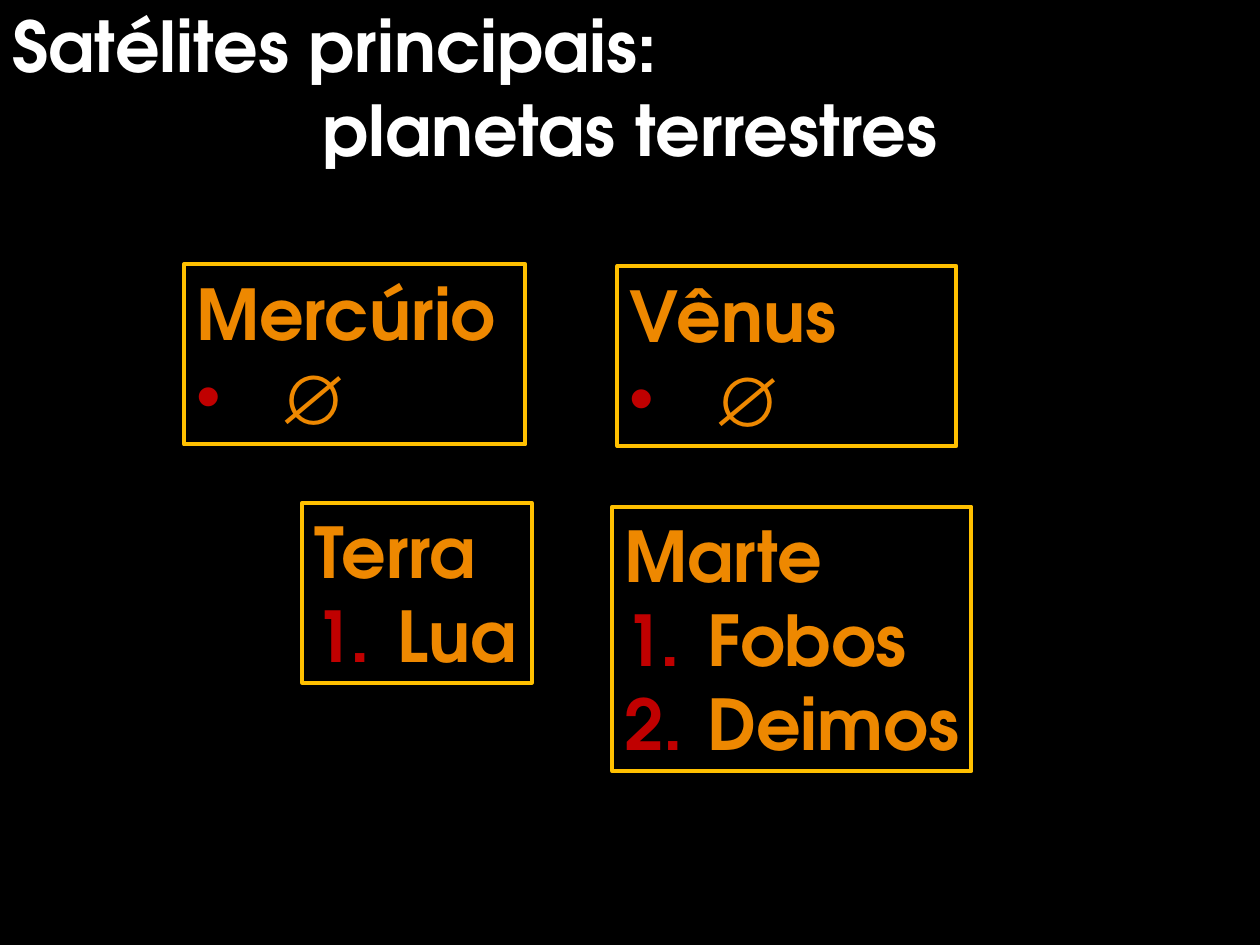
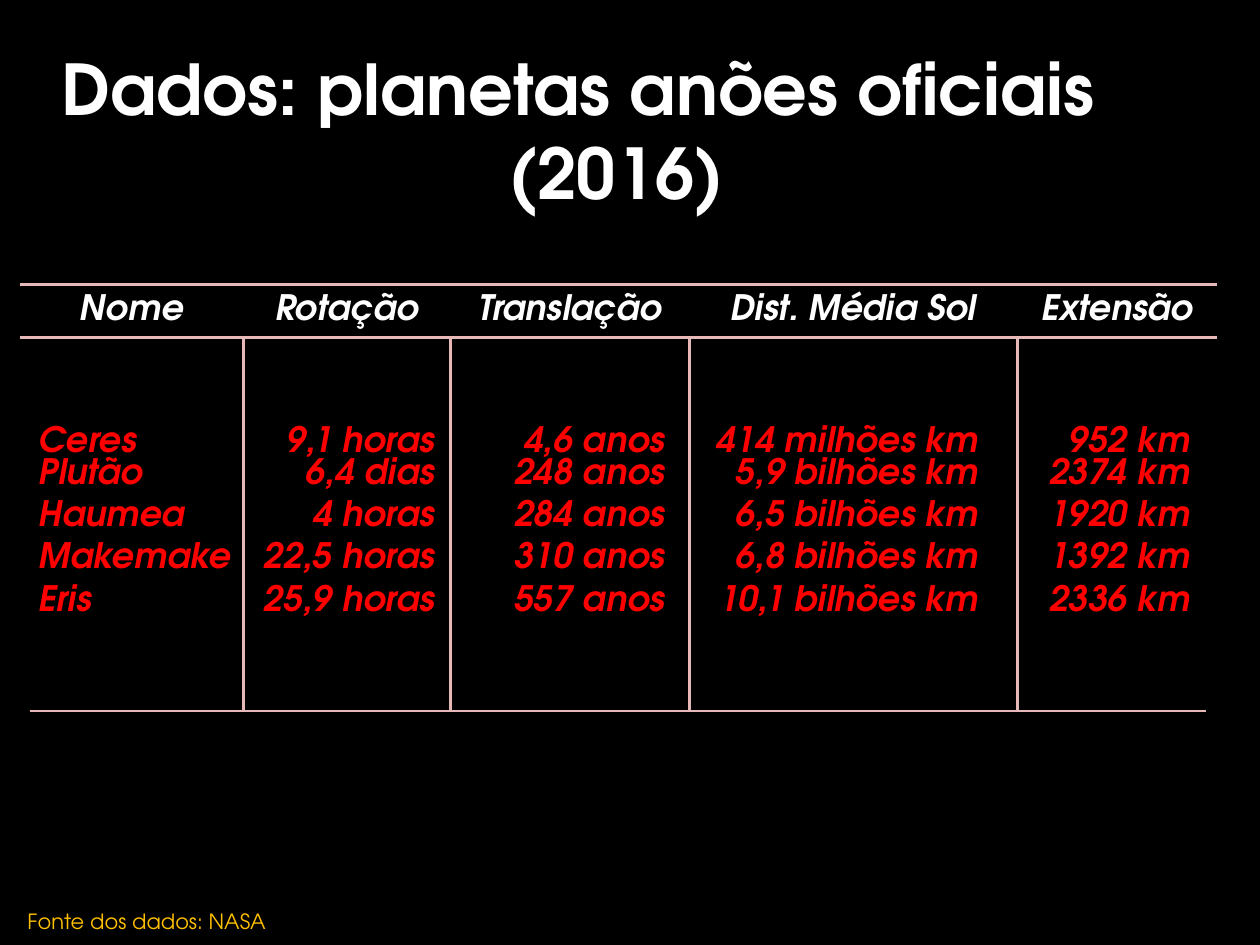
from itertools import accumulate

from lxml import etree
from pptx import Presentation
from pptx.dml.color import RGBColor
from pptx.enum.shapes import MSO_CONNECTOR, MSO_SHAPE
from pptx.enum.text import MSO_ANCHOR, PP_ALIGN
from pptx.oxml.ns import qn
from pptx.util import Pt

LEFT, CENTER, RIGHT = PP_ALIGN.LEFT, PP_ALIGN.CENTER, PP_ALIGN.RIGHT
TOP, MIDDLE, BOTTOM = MSO_ANCHOR.TOP, MSO_ANCHOR.MIDDLE, MSO_ANCHOR.BOTTOM
STRAIGHT = MSO_CONNECTOR.STRAIGHT
RECTANGLE = MSO_SHAPE.RECTANGLE

FONT, SYMBOL_FONT = "TeX Gyre Adventor", "Arial"
BLACK, WHITE, RED = "000000", "FFFFFF", "FF0000"
GOLD, ORANGE, MARKER_RED, PINK = "FFC000", "EE8800", "C00000", "E6B9B8"
INSETS = (7.2, 3.6, 7.2, 3.6)
HANGING = 36

# name, satellites, box (left, top, width, height)
PLANETS = [
    ("Mercúrio", [], (105.1, 151, 195.1, 103)),
    ("Vênus", [], (352.8, 152, 193.7, 103)),
    ("Terra", ["Lua"], (172.8, 287.3, 131, 103)),
    ("Marte", ["Fobos", "Deimos"], (349.9, 289.5, 205.2, 151.2)),
]

# heading, column width, alignment of the values, left margin, right margin
COLUMNS = [
    ("Nome", 127.5, LEFT, 10.5, 0),
    ("Rotação", 118.5, RIGHT, 0, 9),
    ("Translação", 136.5, RIGHT, 0, 14),
    ("Dist. Média Sol", 187.5, RIGHT, 0, 22),
    ("Extensão", 114, RIGHT, 0, 15),
]
DWARF_PLANETS = [
    ("Ceres", "9,1 horas", "4,6 anos", "414 milhões km", "952 km"),
    ("Plutão", "6,4 dias", "248 anos", "5,9 bilhões km", "2374 km"),
    ("Haumea", "4 horas", "284 anos", "6,5 bilhões km", "1920 km"),
    ("Makemake", "22,5 horas", "310 anos", "6,8 bilhões km", "1392 km"),
    ("Eris", "25,9 horas", "557 anos", "10,1 bilhões km", "2336 km"),
]
ROW_HEIGHTS = [30.3, 69.3, 24, 24, 24, 72]


def rgb(hex_color):
    return RGBColor.from_string(hex_color)


def points(*lengths):
    return [Pt(length) for length in lengths]


def write(paragraph, text, size=40, color=WHITE, font=FONT, bold=True,
          italic=False, align=LEFT):
    paragraph.alignment = align
    run = paragraph.add_run()
    run.text = text
    run.font.size = Pt(size)
    run.font.name = font
    run.font.bold = bold
    run.font.italic = italic
    run.font.color.rgb = rgb(color)


def set_insets(frame, left, top, right, bottom):
    frame.margin_left, frame.margin_top = Pt(left), Pt(top)
    frame.margin_right, frame.margin_bottom = Pt(right), Pt(bottom)


def add_paragraph(frame, index):
    return frame.paragraphs[0] if index == 0 else frame.add_paragraph()


def add_text_box(slide, box, lines, anchor=TOP, **style):
    """Each line is a pair of text and alignment."""
    frame = slide.shapes.add_textbox(*points(*box)).text_frame
    frame.word_wrap = True
    frame.vertical_anchor = anchor
    set_insets(frame, *INSETS)
    for index, (text, align) in enumerate(lines):
        write(add_paragraph(frame, index), text, align=align, **style)


def add_title(slide, box, first_line, second_line):
    lines = [(first_line, LEFT), (second_line, CENTER)]
    add_text_box(slide, box, lines, anchor=MIDDLE)


def add_slide(deck):
    slide = deck.slides.add_slide(deck.slide_layouts[6])
    slide.background.fill.solid()
    slide.background.fill.fore_color.rgb = rgb(BLACK)
    return slide


def set_marker(paragraph, numbered=None):
    """Hang the paragraph; numbered is True, False (bullet) or None (no marker)."""
    properties = paragraph._p.get_or_add_pPr()
    properties.set("marL", str(Pt(HANGING)))
    properties.set("indent", str(-Pt(HANGING)))
    if numbered is None:
        etree.SubElement(properties, qn("a:buNone"))
        return
    color = etree.SubElement(properties, qn("a:buClr"))
    etree.SubElement(color, qn("a:srgbClr"), val=MARKER_RED)
    if numbered:
        etree.SubElement(properties, qn("a:buFont"), typeface="+mj-lt")
        etree.SubElement(properties, qn("a:buAutoNum"), type="arabicPeriod")
    else:
        etree.SubElement(properties, qn("a:buFont"), typeface=SYMBOL_FONT)
        etree.SubElement(properties, qn("a:buChar"), char="•")


def add_planet(slide, box, name, satellites):
    card = slide.shapes.add_shape(RECTANGLE, *points(*box))
    card.shadow.inherit = False
    card.fill.background()
    card.line.color.rgb = rgb(GOLD)
    card.line.width = Pt(2.25)
    frame = card.text_frame
    frame.word_wrap = True
    frame.vertical_anchor = TOP
    set_insets(frame, 7.2, 3.6, 0, 3.6)

    heading = frame.paragraphs[0]
    write(heading, name, color=ORANGE)
    set_marker(heading)
    for satellite in satellites:
        entry = frame.add_paragraph()
        write(entry, " " + satellite, color=ORANGE)
        set_marker(entry, numbered=True)
    if not satellites:
        entry = frame.add_paragraph()
        write(entry, " ", color=ORANGE)
        write(entry, "∅", color=ORANGE, font=SYMBOL_FONT)
        set_marker(entry, numbered=False)


def add_rule(slide, x1, y1, x2, y2):
    rule = slide.shapes.add_connector(STRAIGHT, *points(x1, y1, x2, y2))
    rule.line.color.rgb = rgb(PINK)
    rule.line.width = Pt(1.5)
    etree.SubElement(rule._element.spPr, qn("a:effectLst"))


def clear_cell(cell):
    """Take away the borders and fill that the table style gives."""
    properties = cell._tc.get_or_add_tcPr()
    for side in ("lnL", "lnR", "lnT", "lnB"):
        border = etree.SubElement(properties, qn("a:" + side))
        etree.SubElement(border, qn("a:noFill"))
    cell.fill.background()


def add_data_table(slide, left, top):
    widths = [column[1] for column in COLUMNS]
    width, height = sum(widths), sum(ROW_HEIGHTS)
    table = slide.shapes.add_table(
        len(ROW_HEIGHTS), len(COLUMNS), *points(left, top, width, height)).table
    table.first_row = table.horz_banding = False
    for row, row_height in zip(table.rows, ROW_HEIGHTS):
        row.height = Pt(row_height)
    anchors = [MIDDLE, BOTTOM] + [TOP] * 4
    for c, (heading, column_width, align, left_gap, right_gap) in enumerate(COLUMNS):
        table.columns[c].width = Pt(column_width)
        values = [heading] + [planet[c] for planet in DWARF_PLANETS]
        for r, (value, anchor) in enumerate(zip(values, anchors)):
            cell = table.cell(r, c)
            clear_cell(cell)
            cell.vertical_anchor = anchor
            is_heading = r == 0
            gaps = (0, 0) if is_heading else (left_gap, right_gap)
            set_insets(cell, gaps[0], 0, gaps[1], 0)
            write(cell.text_frame.paragraphs[0], value, size=20, italic=True,
                  color=WHITE if is_heading else RED,
                  align=CENTER if is_heading else align)

    header_bottom, bottom = top + ROW_HEIGHTS[0], top + height
    for y in (top, header_bottom):
        add_rule(slide, left, y, left + width, y)
    add_rule(slide, left + 5.5, bottom, left + width - 6.5, bottom)
    for offset in accumulate(widths[:-1]):
        add_rule(slide, left + offset, header_bottom, left + offset, bottom)


def build_satellites(deck):
    slide = add_slide(deck)
    add_title(slide, (0, 31.7, 720, 36), "Satélites principais:", "planetas terrestres")
    for name, satellites, box in PLANETS:
        add_planet(slide, box, name, satellites)


def build_dwarf_planets(deck):
    slide = add_slide(deck)
    add_title(slide, (28.1, 37.4, 648, 73.4), "Dados: planetas anões oficiais", "(2016)")
    add_data_table(slide, 11.5, 162.7)
    add_text_box(slide, (8.6, 515.5, 514.8, 21.6), [("Fonte dos dados: NASA", LEFT)],
                 size=12, color=GOLD, bold=False)


def main():
    deck = Presentation()
    deck.slide_width, deck.slide_height = Pt(720), Pt(540)
    build_satellites(deck)
    build_dwarf_planets(deck)
    deck.save("out.pptx")


if __name__ == "__main__":
    main()
